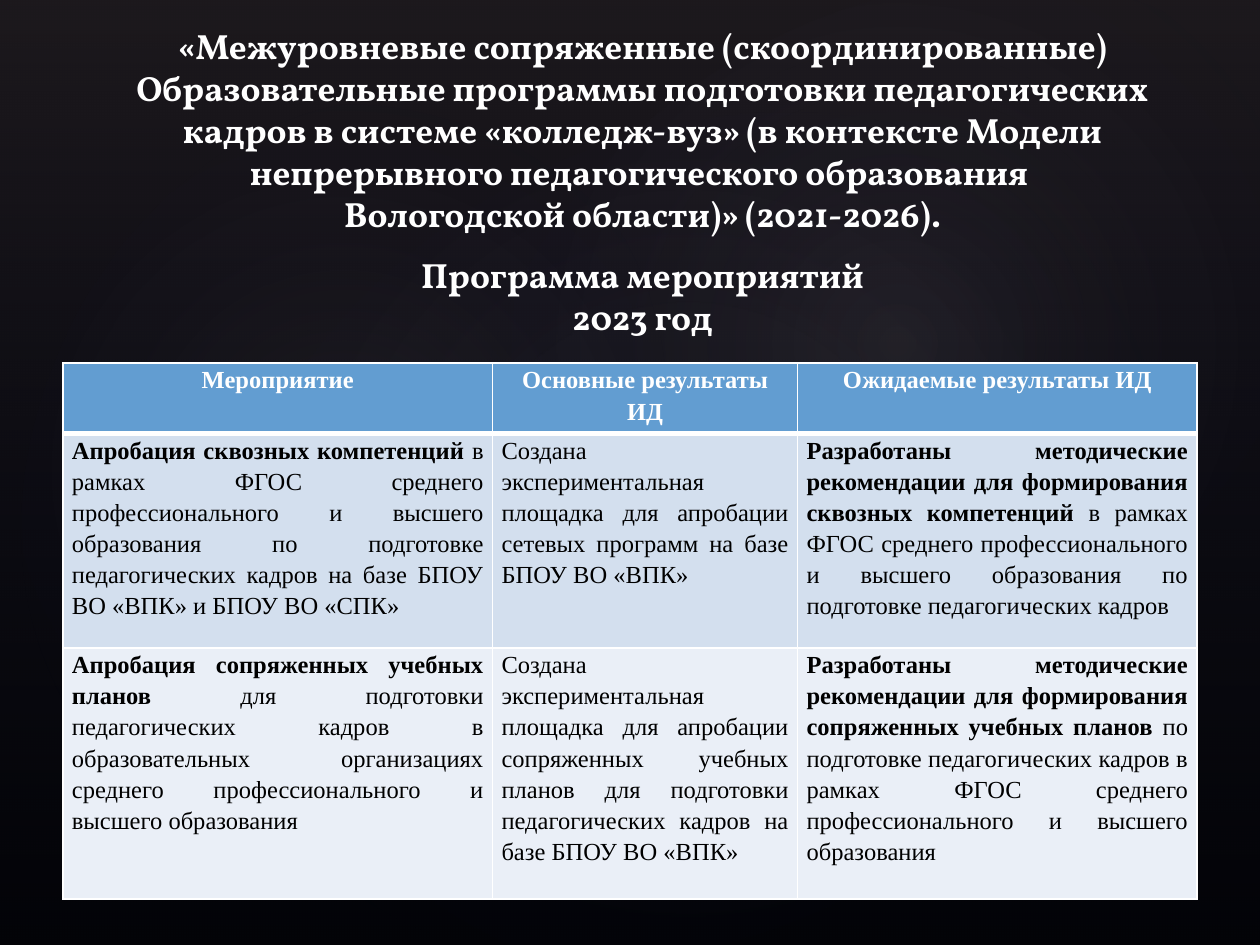
from dataclasses import dataclass

from pptx import Presentation
from pptx.dml.color import RGBColor
from pptx.enum.shapes import MSO_SHAPE
from pptx.enum.text import MSO_ANCHOR, MSO_AUTO_SIZE, PP_ALIGN
from pptx.oxml import parse_xml
from pptx.oxml.ns import nsdecls, qn
from pptx.util import Cm, Pt

RECTANGLE, OVAL = MSO_SHAPE.RECTANGLE, MSO_SHAPE.OVAL
CENTER, JUSTIFY = PP_ALIGN.CENTER, PP_ALIGN.JUSTIFY
TOP, BOTTOM = MSO_ANCHOR.TOP, MSO_ANCHOR.BOTTOM
NO_AUTOFIT = MSO_AUTO_SIZE.NONE
TITLE_ONLY = 5


@dataclass(frozen=True)
class Theme:
    """Colours, fonts and type sizes of the slide."""
    backdrop: str = "000000"
    haze: str = "504652"
    glow: str = "C4BCC6"
    navy: str = "242852"
    light: str = "FFFFFF"
    dark: str = "000000"
    header: str = "629DD1"
    bands: tuple = ("D3DFEE", "EAEFF7")
    title_font: str = "Vollkorn"
    table_font: str = "Times New Roman"
    title_size: int = 20
    table_size: int = 14


THEME = Theme()
SLIDE_BOX = (0, 0, 25.4, 19.05)
TITLE_BOX = (1.78, 0.76, 22.35, 6.17)
TABLE_BOX = (1.27, 7.32, 22.86, 10.8)
COLUMN_WIDTHS = (8.66, 6.15, 8.05)
ROW_HEIGHTS = (1.42, 4.32, 5.06)

GLOWS = (
    ((3.81, 2.9, 20.12, 15.85), 328.7, 7),
    ((-0.76, 3.25, 15.39, 12.45), 294.3, 8),
    ((9.09, 0.33, 18.01, 13.21), 328.7, 8),
)

TITLE_PARAGRAPHS = (
    ("«Межуровневые сопряженные (скоординированные) Образовательные программы "
     "подготовки педагогических кадров в системе «колледж-вуз» (в контексте Модели "
     "непрерывного педагогического образования ",
     "Вологодской области)» (2021-2026)."),
    ("Программа мероприятий", "2023 год"),
)

HEADINGS = ("Мероприятие", "Основные результаты ИД", "Ожидаемые результаты ИД")
ACTIVITIES = (
    (
        ("Апробация сквозных компетенций ",
         "в рамках ФГОС среднего профессионального и высшего образования по подготовке "
         "педагогических кадров на базе БПОУ ВО «ВПК» и БПОУ ВО «СПК»"),
        ("", "Создана экспериментальная площадка для апробации сетевых программ "
             "на базе БПОУ ВО «ВПК»"),
        ("Разработаны методические рекомендации для формирования сквозных компетенций ",
         "в рамках ФГОС среднего профессионального и высшего образования "
         "по подготовке педагогических кадров"),
    ),
    (
        ("Апробация сопряженных учебных планов",
         " для подготовки педагогических кадров в образовательных организациях "
         "среднего профессионального и высшего образования"),
        ("", "Создана экспериментальная площадка для апробации сопряженных учебных планов "
             "для подготовки педагогических кадров на базе БПОУ ВО «ВПК»"),
        ("Разработаны методические рекомендации для формирования сопряженных учебных планов ",
         "по подготовке педагогических кадров в рамках ФГОС среднего профессионального "
         "и высшего образования"),
    ),
)


def rgb(color):
    """Turn a hex string into a colour."""
    return RGBColor.from_string(color)


def add_run(paragraph, text, font, size, color, bold):
    """Add one formatted run to a paragraph."""
    run = paragraph.add_run()
    run.text = text
    run.font.name, run.font.size, run.font.bold = font, Pt(size), bold
    run.font.color.rgb = rgb(color)


def add_gradient_shape(slide, kind, box, stops, direction, rotation=0):
    """Draw a borderless shape with a translucent gradient."""
    shape = slide.shapes.add_shape(kind, *map(Cm, box))
    shape.rotation = rotation
    shape.shadow.inherit = False
    shape.line.fill.background()
    shape.fill.background()
    stop_xml = "".join(
        f'<a:gs pos="{place * 1000}"><a:srgbClr val="{color}">'
        f'<a:alpha val="{alpha * 1000}"/></a:srgbClr></a:gs>'
        for place, color, alpha in stops)
    gradient = parse_xml(f'<a:gradFill {nsdecls("a")} rotWithShape="1">'
                         f'<a:gsLst>{stop_xml}</a:gsLst>{direction}</a:gradFill>')
    properties = shape.element.spPr
    properties.replace(properties.find(qn("a:noFill")), gradient)


def build_backdrop(slide, box):
    """Lay a dark haze and soft glows over the slide box."""
    slide.background.fill.solid()
    slide.background.fill.fore_color.rgb = rgb(THEME.backdrop)
    add_gradient_shape(slide, RECTANGLE, box,
                       ((0, THEME.haze, 36), (100, THEME.navy, 10)),
                       '<a:lin ang="5400000" scaled="0"/>')
    left, top = box[:2]
    for (x, y, width, height), rotation, alpha in GLOWS:
        add_gradient_shape(slide, OVAL, (left + x, top + y, width, height),
                           ((0, THEME.glow, alpha), (58, THEME.navy, 0)),
                           '<a:path path="circle"><a:fillToRect l="50000" t="50000" '
                           'r="50000" b="50000"/></a:path>', rotation)


def set_border(cell, bottom=1, top=1):
    """Outline a cell in the light colour."""
    properties = cell._tc.get_or_add_tcPr()
    for index, (side, width) in enumerate(
            (("lnL", 1), ("lnR", 1), ("lnT", top), ("lnB", bottom))):
        properties.insert(index, parse_xml(
            f'<a:{side} {nsdecls("a")} w="{Pt(width)}"><a:solidFill>'
            f'<a:srgbClr val="{THEME.light}"/></a:solidFill></a:{side}>'))


def fill_cell(cell, runs, fill, color, alignment):
    """Write bold and regular runs into a filled cell."""
    cell.fill.solid()
    cell.fill.fore_color.rgb = rgb(fill)
    cell.margin_left = cell.margin_right = Cm(0.18)
    cell.margin_top = cell.margin_bottom = 0
    cell.vertical_anchor = TOP
    paragraph = cell.text_frame.paragraphs[0]
    paragraph.alignment, paragraph.line_spacing = alignment, 1.15
    for text, bold in zip(runs, (True, False)):
        if text:
            add_run(paragraph, text, THEME.table_font, THEME.table_size, color, bold)


def build_activities(slide, box):
    """Place the table of activities and results in the box."""
    table = slide.shapes.add_table(len(ROW_HEIGHTS), len(COLUMN_WIDTHS), *map(Cm, box)).table
    for column, width in zip(table.columns, COLUMN_WIDTHS):
        column.width = Cm(width)
    for row, height in zip(table.rows, ROW_HEIGHTS):
        row.height = Cm(height)
    for column, heading in enumerate(HEADINGS):
        cell = table.cell(0, column)
        fill_cell(cell, (heading,), THEME.header, THEME.light, CENTER)
        set_border(cell, bottom=3)
    for row, (activity, band) in enumerate(zip(ACTIVITIES, THEME.bands), 1):
        for column, runs in enumerate(activity):
            cell = table.cell(row, column)
            fill_cell(cell, runs, band, THEME.dark, JUSTIFY)
            set_border(cell, top=3 if row == 1 else 1)


def build_title(slide, box):
    """Place the programme title in front of the backdrop."""
    title = slide.shapes.title
    title.left, title.top, title.width, title.height = map(Cm, box)
    title.element.getparent().append(title.element)
    frame = title.text_frame
    frame.word_wrap, frame.auto_size, frame.vertical_anchor = True, NO_AUTOFIT, BOTTOM
    for index, lines in enumerate(TITLE_PARAGRAPHS):
        paragraph = frame.add_paragraph() if index else frame.paragraphs[0]
        paragraph.alignment, paragraph.line_spacing = CENTER, 1.0
        paragraph.space_before = Pt(11 if index else 0)
        for number, line in enumerate(lines):
            if number:
                paragraph.add_line_break()
            add_run(paragraph, line, THEME.title_font, THEME.title_size, THEME.light, True)


def main():
    """Build the slide and save it."""
    presentation = Presentation()
    presentation.slide_width, presentation.slide_height = map(Cm, SLIDE_BOX[2:])
    slide = presentation.slides.add_slide(presentation.slide_layouts[TITLE_ONLY])
    build_backdrop(slide, SLIDE_BOX)
    build_activities(slide, TABLE_BOX)
    build_title(slide, TITLE_BOX)
    presentation.save("out.pptx")


if __name__ == "__main__":
    main()
